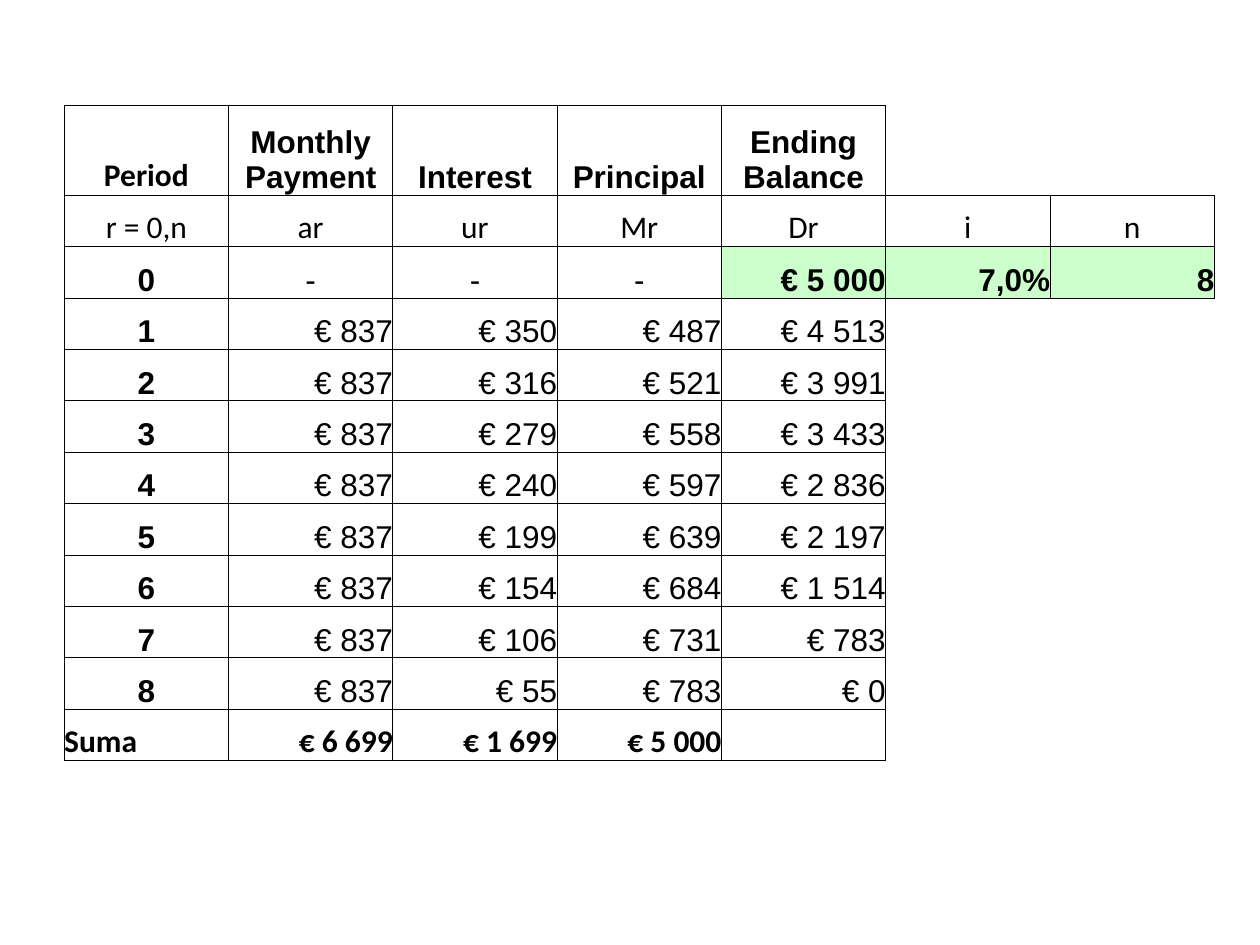
from pptx import Presentation
from pptx.dml.color import RGBColor
from pptx.enum.text import MSO_ANCHOR, PP_ALIGN
from pptx.oxml.ns import qn
from pptx.util import Inches, Pt
from lxml.etree import SubElement

COLORS = {"ink": "000000", "input": "CCFFCC"}
COLUMNS = 7
SCHEDULE_COLUMNS = 5
HEADER_ROW, SYMBOL_ROW, START_ROW = 0, 1, 2
SCHEDULE = [
    ["Period", "Monthly Payment", "Interest", "Principal", "Ending Balance"],
    ["r = 0,n", "ar", "ur", "Mr", "Dr", "i", "n"],
    ["0", "-", "-", "-", "€ 5 000", "7,0%", "8"],
    ["1", "€ 837", "€ 350", "€ 487", "€ 4 513"],
    ["2", "€ 837", "€ 316", "€ 521", "€ 3 991"],
    ["3", "€ 837", "€ 279", "€ 558", "€ 3 433"],
    ["4", "€ 837", "€ 240", "€ 597", "€ 2 836"],
    ["5", "€ 837", "€ 199", "€ 639", "€ 2 197"],
    ["6", "€ 837", "€ 154", "€ 684", "€ 1 514"],
    ["7", "€ 837", "€ 106", "€ 731", "€ 783"],
    ["8", "€ 837", "€ 55", "€ 783", "€ 0"],
    ["Suma", "€ 6 699", "€ 1 699", "€ 5 000"],
]
TOTAL_ROW = len(SCHEDULE) - 1


def is_boxed(row, column):
    """Tell whether a cell belongs to the schedule or to the loan inputs."""
    if not 0 <= row <= TOTAL_ROW or not 0 <= column < COLUMNS:
        return False
    return column < SCHEDULE_COLUMNS or row in (SYMBOL_ROW, START_ROW)


def is_input(row, column):
    """Tell whether a cell holds one of the loan inputs."""
    return row == START_ROW and column >= SCHEDULE_COLUMNS - 1


def set_borders(cell, row, column):
    """Rule each side that touches a boxed cell and clear the others."""
    properties = cell._tc.get_or_add_tcPr()
    sides = {"a:lnL": (0, -1), "a:lnR": (0, 1), "a:lnT": (-1, 0), "a:lnB": (1, 0)}
    for tag, (down, across) in sides.items():
        line = SubElement(properties, qn(tag), w=str(Pt(0.5)))
        if is_boxed(row, column) or is_boxed(row + down, column + across):
            fill = SubElement(line, qn("a:solidFill"))
            SubElement(fill, qn("a:srgbClr"), val=COLORS["ink"])
        else:
            SubElement(line, qn("a:noFill"))


def choose_alignment(row, column, text):
    """Centre labels, periods and dashes, and align amounts to the right."""
    if row == TOTAL_ROW and column == 0:
        return PP_ALIGN.LEFT
    if row <= SYMBOL_ROW or column == 0 or text == "-":
        return PP_ALIGN.CENTER
    return PP_ALIGN.RIGHT


def write_cell(cell, row, column, text):
    """Write one table entry in the style of its row and column."""
    paragraph = cell.text_frame.paragraphs[0]
    paragraph.alignment = choose_alignment(row, column, text)
    run = paragraph.add_run()
    run.text = text
    calibri = row in (SYMBOL_ROW, TOTAL_ROW) or (row, column) == (HEADER_ROW, 0)
    run.font.name = "Calibri" if calibri else "Arial"
    run.font.size = Pt(18)
    run.font.bold = row != SYMBOL_ROW and (
        row in (HEADER_ROW, TOTAL_ROW) or column == 0 or is_input(row, column)
    )
    run.font.color.rgb = RGBColor.from_string(COLORS["ink"])


def add_schedule(slide, left, top, width, height):
    """Build the repayment schedule table inside the given box."""
    frame = slide.shapes.add_table(len(SCHEDULE), COLUMNS, left, top, width, height)
    table = frame.table
    table.first_row = table.horz_banding = False
    header_height = Inches(0.71)
    for column in table.columns:
        column.width = width // COLUMNS
    for row in table.rows:
        row.height = (height - header_height) // TOTAL_ROW
    table.rows[HEADER_ROW].height = header_height
    for row, entries in enumerate(SCHEDULE):
        for column in range(COLUMNS):
            cell = table.cell(row, column)
            cell.margin_left = cell.margin_right = 0
            cell.margin_top = cell.margin_bottom = 0
            cell.vertical_anchor = MSO_ANCHOR.BOTTOM
            set_borders(cell, row, column)
            if is_input(row, column):
                cell.fill.solid()
                cell.fill.fore_color.rgb = RGBColor.from_string(COLORS["input"])
            else:
                cell.fill.background()
            if column < len(entries):
                write_cell(cell, row, column, entries[column])


def main():
    """Create the presentation with the repayment schedule."""
    presentation = Presentation()
    presentation.slide_width = Inches(10)
    presentation.slide_height = Inches(7.5)
    slide = presentation.slides.add_slide(presentation.slide_layouts[6])
    add_schedule(slide, Inches(0.51), Inches(0.84), Inches(9.13), Inches(5.2))
    presentation.save("out.pptx")


if __name__ == "__main__":
    main()
